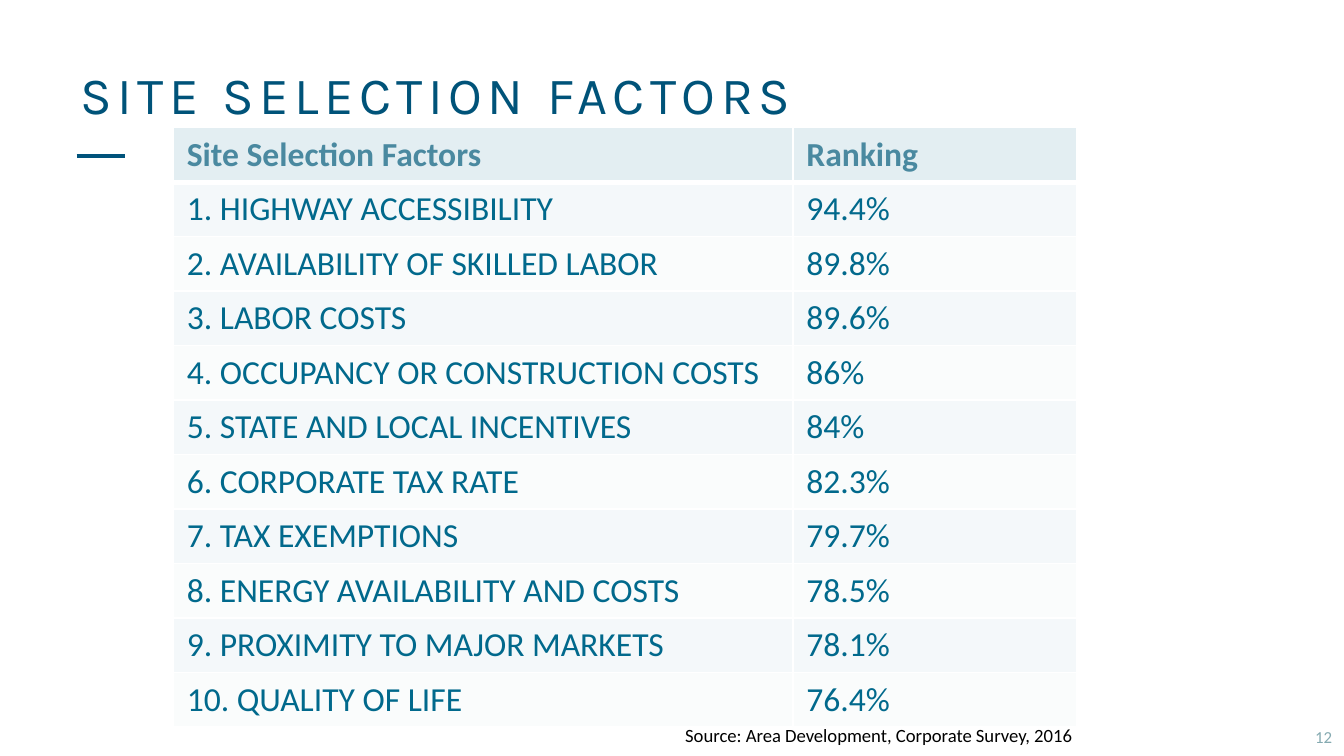
"""Build the site selection factors slide with its ranking table."""
import pptx
import pptx.dml.color
import pptx.enum.shapes
import pptx.enum.text
import pptx.oxml
import pptx.oxml.ns
import pptx.util
import lxml.etree

Inches, Pt = pptx.util.Inches, pptx.util.Pt
RGB = pptx.dml.color.RGBColor.from_string
ALIGN, ANCHOR = pptx.enum.text.PP_ALIGN, pptx.enum.text.MSO_ANCHOR
qn = pptx.oxml.ns.qn

COLORS = {
    "title": "005379", "rule": "00537B", "head": "4A89A0", "body": "01698C",
    "head_fill": "E3EEF2", "odd_fill": "F4F8FA", "even_fill": "FAFCFC",
    "border": "FFFFFF", "number": "85AAB1", "source": "000000",
}
FACTORS = [
    ("HIGHWAY ACCESSIBILITY", "94.4%"),
    ("AVAILABILITY OF SKILLED LABOR", "89.8%"),
    ("LABOR COSTS", "89.6%"),
    ("OCCUPANCY OR CONSTRUCTION COSTS", "86%"),
    ("STATE AND LOCAL INCENTIVES", "84%"),
    ("CORPORATE TAX RATE", "82.3%"),
    ("TAX EXEMPTIONS", "79.7%"),
    ("ENERGY AVAILABILITY AND COSTS", "78.5%"),
    ("PROXIMITY TO MAJOR MARKETS", "78.1%"),
    ("QUALITY OF LIFE", "76.4%"),
]


def write(tf, text, color, align=ALIGN.LEFT, **formats):
    p = tf.paragraphs[0]
    p.alignment = align
    r = p.add_run()
    r.text = text
    r.font.color.rgb = RGB(COLORS[color])
    for name, value in formats.items():
        setattr(r.font, name, value)
    return r


def add_border(cell, side, width):
    tcPr = cell._tc.get_or_add_tcPr()
    ln = lxml.etree.SubElement(tcPr, qn(f"a:{side}"), w=str(Pt(width)))
    fill = lxml.etree.SubElement(ln, qn("a:solidFill"))
    lxml.etree.SubElement(fill, qn("a:srgbClr"), val=COLORS["border"])


prs = pptx.Presentation()
prs.slide_width, prs.slide_height = Inches(10), Inches(10 * 9 / 16)
s = prs.slides.add_slide(prs.slide_layouts[5])

rule = s.shapes.add_connector(
    pptx.enum.shapes.MSO_CONNECTOR.STRAIGHT,
    Inches(0.57), Inches(1.16), Inches(0.93), Inches(1.16))
rule.line.color.rgb = RGB(COLORS["rule"])
rule.line.width = Pt(2.25)
lxml.etree.SubElement(rule._element.spPr, qn("a:effectLst"))

title = s.shapes.title
box = {"left": 0.5, "top": 0.23, "width": 9, "height": 0.94}
for name, value in box.items():
    setattr(title, name, Inches(value))
title.text_frame.vertical_anchor = ANCHOR.MIDDLE
r = write(title.text_frame, "SITE SELECTION FACTORS", "title", name="Karla", size=Pt(28))
r.font._element.set("spc", "300")

rows = [("Site Selection Factors", "Ranking")]
rows += [(f"{i}. {factor}", share) for i, (factor, share) in enumerate(FACTORS, 1)]
frame = s.shapes.add_table(
    len(rows), 2, Inches(1.29), Inches(0.95), Inches(6.72), Inches(4.4))
table = frame.table
for column, width in zip(table.columns, (4.61, 2.11)):
    column.width = Inches(width)
for i, row in enumerate(rows):
    table.rows[i].height = Inches(0.34)
    fill = "head_fill" if i == 0 else "odd_fill" if i % 2 else "even_fill"
    for j, text in enumerate(row):
        cell = table.cell(i, j)
        write(cell.text_frame, text, "body" if i else "head",
              name="Calibri", size=Pt(18), bold=i == 0)
        borders = {"lnL": 1, "lnR": 1, "lnT": 3 if i == 1 else 1, "lnB": 1 if i else 3}
        for side, width in borders.items():
            add_border(cell, side, width)
        cell.fill.solid()
        cell.fill.fore_color.rgb = RGB(COLORS[fill])
frame.height = Inches(4.4)

notes = [
    ("12", (6.9, 5.35, 3.11, 0.27), "number", 9, ALIGN.RIGHT, ANCHOR.MIDDLE),
    ("Source: Area Development, Corporate Survey, 2016",
     (5, 5.34, 6.19, 0.27), "source", 10, ALIGN.LEFT, ANCHOR.TOP),
]
for text, place, color, size, align, anchor in notes:
    tf = s.shapes.add_textbox(*map(Inches, place)).text_frame
    tf.word_wrap = True
    tf.vertical_anchor = anchor
    write(tf, text, color, align, name="Calibri", size=Pt(size))

prs.save("out.pptx")
